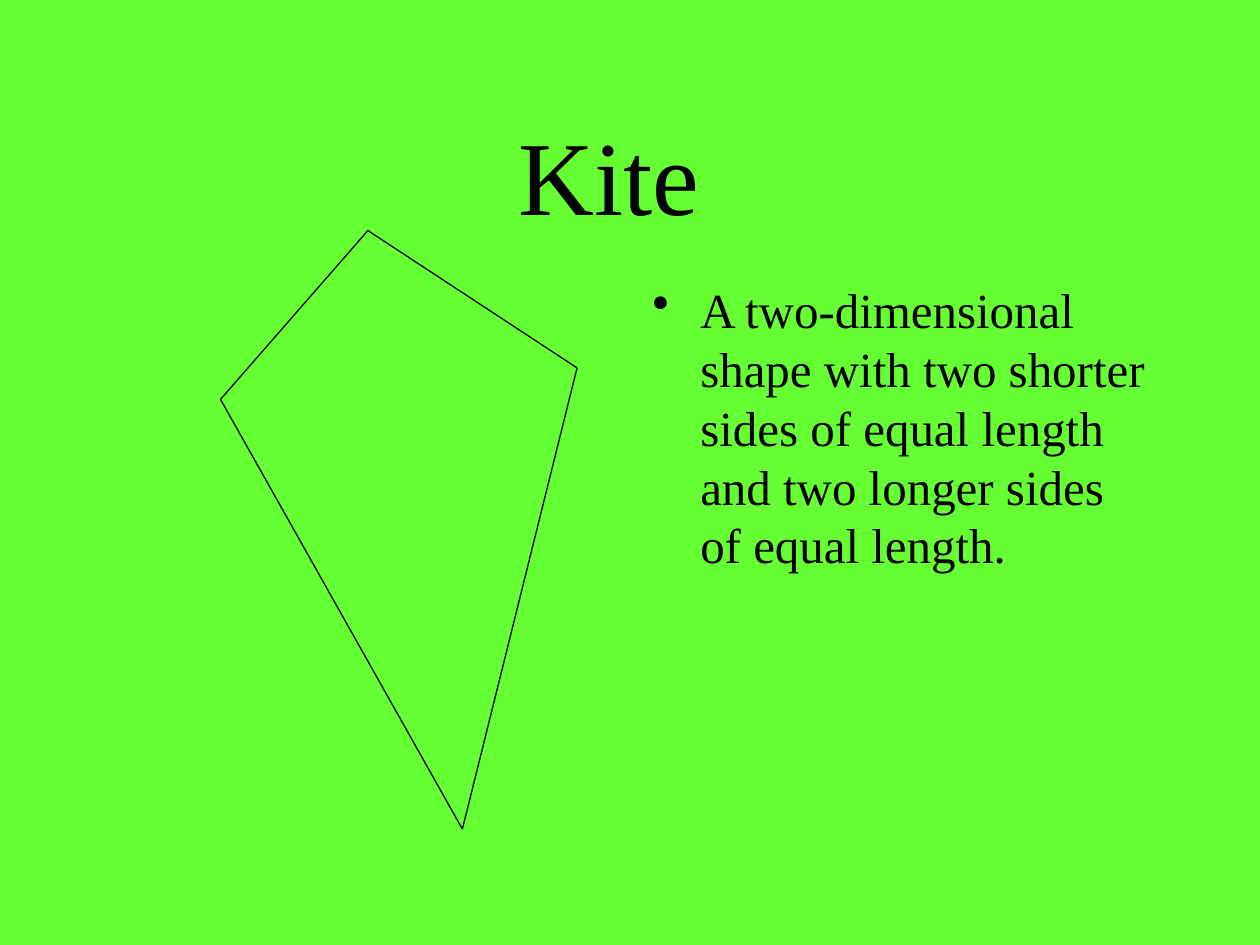
from lxml import etree
from pptx import Presentation
from pptx.dml.color import RGBColor
from pptx.enum.shapes import MSO_CONNECTOR
from pptx.enum.text import MSO_ANCHOR, PP_ALIGN
from pptx.oxml.ns import qn
from pptx.util import Inches, Pt

STRAIGHT = MSO_CONNECTOR.STRAIGHT
MIDDLE, TOP = MSO_ANCHOR.MIDDLE, MSO_ANCHOR.TOP
CENTER, LEFT = PP_ALIGN.CENTER, PP_ALIGN.LEFT

COLORS = {"background": "66FF33", "ink": "000000"}
FONT = "Times New Roman"
TITLE = {"text": "Kite", "at": (0.58, 0.75, 8.5, 1.25), "size": 60,
         "anchor": MIDDLE, "paragraph": {"alignment": CENTER}}
DEFINITION = {
    "text": "A two-dimensional shape with two shorter sides of equal length "
            "and two longer sides of equal length.",
    "at": (5.08, 2.17, 4.17, 4.5), "size": 28, "anchor": TOP,
    "paragraph": {"alignment": LEFT, "space_before": Pt(5.6)},
}
BULLET = {"character": "•", "indent": 0.38}
KITE_CORNERS = [(3.67, 6.58), (1.75, 3.17), (2.92, 1.83), (4.58, 2.92)]
LINE_WIDTH = 0.75


def color(name):
    """Return the named palette color."""
    return RGBColor.from_string(COLORS[name])


def write_text(box, content):
    """Place a text shape and fill it with one formatted paragraph."""
    for side, length in zip(("left", "top", "width", "height"), content["at"]):
        setattr(box, side, Inches(length))
    frame = box.text_frame
    frame.word_wrap = True
    frame.vertical_anchor = content["anchor"]
    para = frame.paragraphs[0]
    for name, value in content["paragraph"].items():
        setattr(para, name, value)
    span = para.add_run()
    span.text = content["text"]
    for name, value in {"name": FONT, "size": Pt(content["size"])}.items():
        setattr(span.font, name, value)
    span.font.color.rgb = color("ink")
    return para


def add_bullet(para):
    """Give a paragraph a hanging bullet."""
    properties = para._p.get_or_add_pPr()
    indent = Inches(BULLET["indent"])
    properties.set("marL", str(indent))
    properties.set("indent", str(-indent))
    bullet = etree.SubElement(properties, qn("a:buChar"))
    bullet.set("char", BULLET["character"])


def add_side(slide, start, end):
    """Draw one side of the kite."""
    points = [Inches(length) for length in (*start, *end)]
    side = slide.shapes.add_connector(STRAIGHT, *points)
    side.line.color.rgb = color("ink")
    side.line.width = Pt(LINE_WIDTH)
    etree.SubElement(side._element.spPr, qn("a:effectLst"))


def main():
    """Build the kite slide and save the deck."""
    deck = Presentation()
    deck.slide_width, deck.slide_height = Inches(10), Inches(7.5)
    slide = deck.slides.add_slide(deck.slide_layouts[5])
    slide.background.fill.solid()
    slide.background.fill.fore_color.rgb = color("background")
    write_text(slide.shapes.title, TITLE)
    body = slide.shapes.add_textbox(0, 0, 0, 0)
    add_bullet(write_text(body, DEFINITION))
    for start, end in zip(KITE_CORNERS, KITE_CORNERS[1:] + KITE_CORNERS[:1]):
        add_side(slide, start, end)
    deck.save("out.pptx")


if __name__ == "__main__":
    main()
